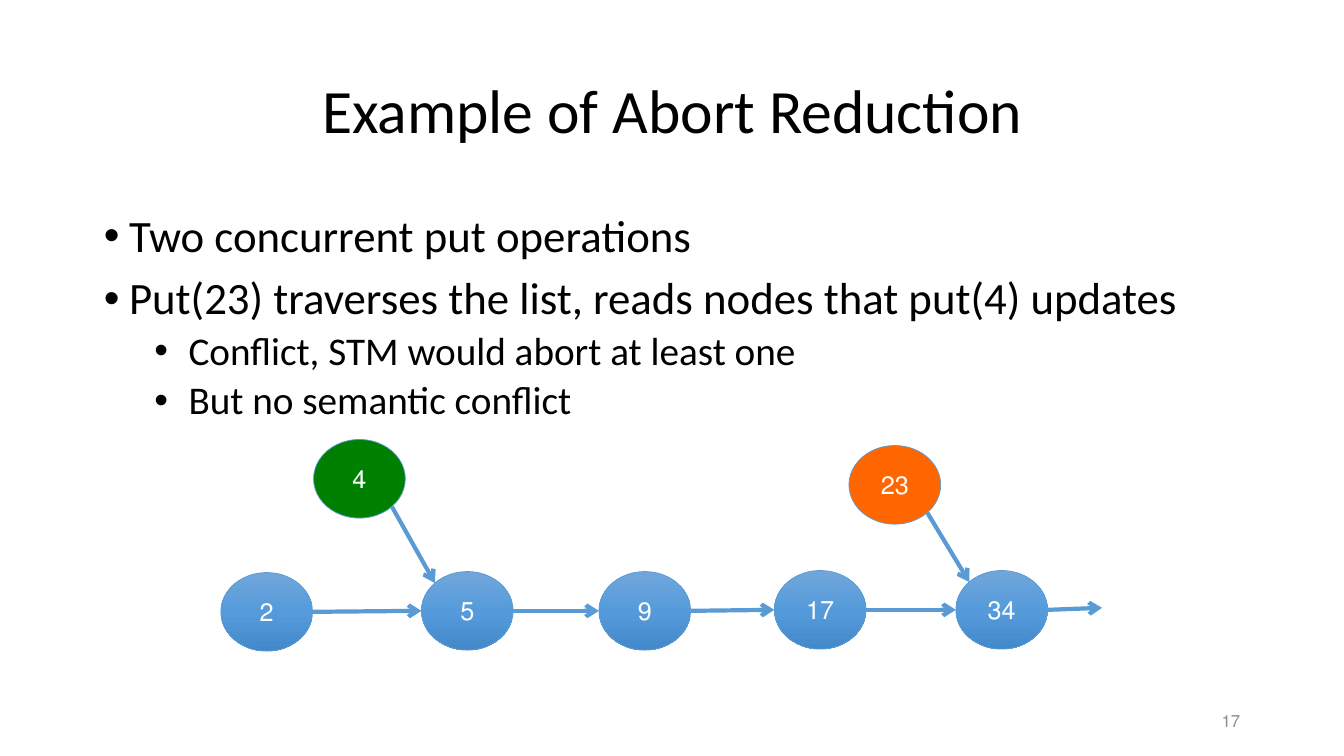
import copy
import pptx
import pptx.util
import pptx.dml.color
import pptx.enum.shapes
import pptx.enum.text
import pptx.oxml
import pptx.oxml.ns

TITLE = "Example of Abort Reduction"
POINTS = [
    (0, "Two concurrent put operations"),
    (0, "Put(23) traverses the list, reads nodes that put(4) updates"),
    (1, "Conflict, STM would abort at least one"),
    (1, "But no semantic conflict"),
]
PAGE = "17"
CHAIN = [("2", 2.19, 5.68), ("5", 4.18, 5.67), ("9", 5.94, 5.67),
         ("17", 7.68, 5.66), ("34", 9.48, 5.66)]
TAIL = (10.93, 6.03)
ADDED = [("4", 3.11, 4.36, "green", 1), ("23", 8.42, 4.42, "orange", 4)]
WIDE, HIGH = 0.91, 0.78
DIAG = 0.5 ** 0.5 / 2

THEME = {
    "font": "Calibri", "ink": "000000", "gray": "8C8C8C", "white": "FFFFFF",
    "edge": "5B9BD5", "green": "008000", "orange": "FF6600",
    "shade": [(0, "71A6DB"), (0.5, "559BDB"), (1, "448ACA")],
    "title": 44, "levels": [32, 28], "node": 18, "page": 12,
}
LEVELS = [(0.25, 0.25, 10), (0.84, 0.34, 5)]

Inches = pptx.util.Inches
Pt = pptx.util.Pt
ALIGN = pptx.enum.text.PP_ALIGN
MIDDLE = pptx.enum.text.MSO_ANCHOR.MIDDLE
qn = pptx.oxml.ns.qn


def color(name):
    return pptx.dml.color.RGBColor.from_string(THEME.get(name, name))


def style(par, size, ink, align=None):
    par.alignment = align
    for run in par.runs:
        run.font.name = THEME["font"]
        run.font.size = Pt(size)
        run.font.color.rgb = color(ink)


def place(shape, *box):
    shape.left, shape.top, shape.width, shape.height = map(Inches, box)


def label(shape, text, size, ink, align):
    frame = shape.text_frame
    frame.text = text
    frame.word_wrap = True
    frame.vertical_anchor = MIDDLE
    par = frame.paragraphs[0]
    style(par, size, ink, align)
    par._p.get_or_add_pPr().set("rtl", "1")


def blend(shape):
    fill = shape.fill
    fill.gradient()
    fill.gradient_angle = 270
    stops = shape.element.spPr.find(".//" + qn("a:gsLst"))
    stops.insert(1, copy.deepcopy(stops[0]))
    for stop, (pos, tint) in zip(fill.gradient_stops, THEME["shade"]):
        stop.position = pos
        stop.color.rgb = color(tint)


def node(slide, text, x, y, tint=None):
    oval = slide.shapes.add_shape(
        pptx.enum.shapes.MSO_SHAPE.OVAL, *map(Inches, (x, y, WIDE, HIGH)))
    oval.shadow.inherit = False
    if tint:
        oval.fill.solid()
        oval.fill.fore_color.rgb = color(tint)
    else:
        blend(oval)
    oval.line.color.rgb = color("edge")
    oval.line.width = Pt(0.5)
    label(oval, text, THEME["node"], "white", ALIGN.CENTER)


def arrow(slide, start, end):
    link = slide.shapes.add_connector(
        pptx.enum.shapes.MSO_CONNECTOR.STRAIGHT, *map(Inches, start + end))
    link.line.color.rgb = color("edge")
    link.line.width = Pt(3)
    head = pptx.oxml.parse_xml(
        '<a:tailEnd %s type="arrow"/>' % pptx.oxml.ns.nsdecls("a"))
    link.line._get_or_add_ln().append(head)
    link.element.spPr.append(pptx.oxml.parse_xml(
        "<a:effectLst %s/>" % pptx.oxml.ns.nsdecls("a")))


def bullet(par, level):
    margin, hang, gap = LEVELS[level]
    par.level = level
    par.line_spacing = 0.9
    par.space_before = Pt(gap)
    par.space_after = Pt(0)
    style(par, THEME["levels"][level], "ink", ALIGN.LEFT)
    props = par._p.get_or_add_pPr()
    props.set("marL", str(Inches(margin)))
    props.set("indent", str(-Inches(hang)))
    for tag, key, value in (("buFont", "typeface", "Arial"),
                            ("buChar", "char", "•")):
        props.append(pptx.oxml.parse_xml('<a:%s %s %s="%s"/>' % (
            tag, pptx.oxml.ns.nsdecls("a"), key, value)))


def words(slide):
    title, body = slide.placeholders
    place(title, 0.92, 0.4, 11.5, 1.45)
    title.text_frame.text = TITLE
    title.text_frame.vertical_anchor = MIDDLE
    head = title.text_frame.paragraphs[0]
    head.line_spacing = 0.9
    style(head, THEME["title"], "ink", ALIGN.CENTER)

    place(body, 0.93, 2.07, 11.5, 4.76)
    frame = body.text_frame
    frame.text = "\n".join(text for _, text in POINTS)
    frame.auto_size = pptx.enum.text.MSO_AUTO_SIZE.NONE
    for par, (level, _) in zip(frame.paragraphs, POINTS):
        bullet(par, level)

    page = slide.shapes.add_textbox(*map(Inches, (9.4, 6.95, 3, 0.4)))
    label(page, PAGE, THEME["page"], "gray", ALIGN.RIGHT)


def graph(slide):
    ends = [(x, y + HIGH / 2) for _, x, y in CHAIN[1:]] + [TAIL]
    for (text, x, y), end in zip(CHAIN, ends):
        node(slide, text, x, y)
        arrow(slide, (x + WIDE, y + HIGH / 2), end)
    for text, x, y, tint, goal in ADDED:
        node(slide, text, x, y, tint)
        _, left, top = CHAIN[goal]
        arrow(slide,
              (x + WIDE * (0.5 + DIAG), y + HIGH * (0.5 + DIAG)),
              (left + WIDE * (0.5 - DIAG), top + HIGH * (0.5 - DIAG)))


def main():
    deck = pptx.Presentation()
    deck.slide_width, deck.slide_height = Inches(13.33), Inches(7.5)
    slide = deck.slides.add_slide(deck.slide_layouts[1])
    words(slide)
    graph(slide)
    deck.save("out.pptx")


if __name__ == "__main__":
    main()
